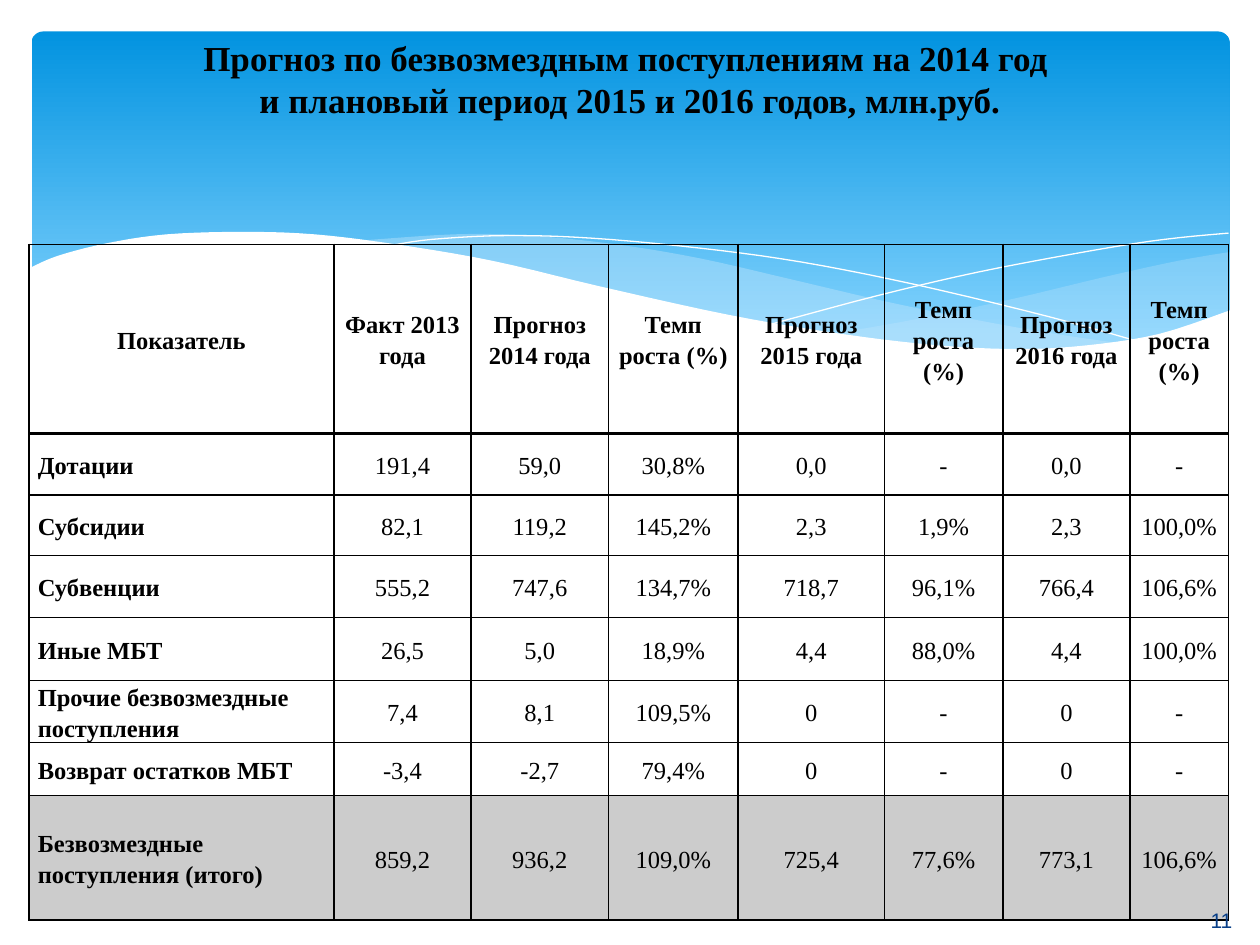
from dataclasses import dataclass

from lxml import etree
from pptx import Presentation
from pptx import util as u
from pptx.dml.color import RGBColor
from pptx.enum import shapes, text
from pptx.oxml import ns


@dataclass(frozen=True)
class Theme:
    sky_top: str = "0293E0"
    sky_bottom: str = "83D3FE"
    wave: str = "C6E7FC"
    white: str = "FFFFFF"
    ink: str = "000000"
    number: str = "073E87"
    serif: str = "Times New Roman"
    sans: str = "Arial"
    title_size: int = 20
    table_size: int = 14
    number_size: int = 12


THEME = Theme()

# Each wave is a list of edges; every edge is a smooth curve through its knots.
RIGHT_WAVE = [
    [(9.76, 2), (9.35, 2.07), (8.76, 2.2), (8.05, 2.37), (7.29, 2.53), (6.61, 2.65)],
    [(6.61, 2.65), (7.18, 2.73), (7.81, 2.77), (8.44, 2.77), (9.05, 2.69),
     (9.42, 2.59), (9.76, 2.47)],
]
MIDDLE_WAVE = [
    [(8.93, 2.73), (8.37, 2.65), (7.75, 2.54), (7.06, 2.4), (6.29, 2.22), (5.55, 2.05),
     (4.89, 1.94), (4.2, 1.87), (3.61, 1.86), (2.86, 1.91)],
    [(2.86, 1.91), (3.62, 2.03), (4.49, 2.22), (5.3, 2.4), (6.01, 2.55), (6.8, 2.68),
     (7.48, 2.76), (8.18, 2.79), (8.93, 2.73)],
]
FRONT_WAVE = [
    [(9.77, 2.46), (9.2, 2.65), (8.63, 2.74), (8.09, 2.77), (7.44, 2.74), (6.68, 2.65),
     (5.79, 2.5), (4.75, 2.27), (3.91, 2.07), (3.15, 1.94), (2.5, 1.86), (1.93, 1.84),
     (1.32, 1.86), (0.85, 1.93), (0.46, 2.03), (0.23, 2.13)],
    [(0.23, 3.29), (9.77, 3.29)],
]
FALLING_LINE = [[(3.09, 1.95), (3.43, 1.9), (4.01, 1.87), (4.69, 1.89), (5.56, 1.97),
                 (6.36, 2.08), (7.27, 2.26), (8.31, 2.51), (9.07, 2.72)]]
RISING_LINE = [[(6.13, 2.57), (6.95, 2.35), (7.76, 2.16), (8.66, 1.99), (9.24, 1.9),
                (9.75, 1.85)]]

COLUMN_WIDTHS = [2.42, 1.09, 1.09, 1.03, 1.16, 0.94, 1.01, 0.78]
ROW_HEIGHTS = [1.5, 0.49, 0.48, 0.49, 0.5, 0.49, 0.42, 0.99]
ROWS = [
    ["Показатель", "Факт 2013 года", "Прогноз 2014 года", "Темп роста (%)",
     "Прогноз 2015 года", "Темп роста (%)", "Прогноз 2016 года", "Темп роста (%)"],
    ["Дотации", "191,4", "59,0", "30,8%", "0,0", "-", "0,0", "-"],
    ["Субсидии", "82,1", "119,2", "145,2%", "2,3", "1,9%", "2,3", "100,0%"],
    ["Субвенции", "555,2", "747,6", "134,7%", "718,7", "96,1%", "766,4", "106,6%"],
    ["Иные МБТ", "26,5", "5,0", "18,9%", "4,4", "88,0%", "4,4", "100,0%"],
    ["Прочие безвозмездные поступления", "7,4", "8,1", "109,5%", "0", "-", "0", "-"],
    ["Возврат остатков МБТ", "-3,4", "-2,7", "79,4%", "0", "-", "0", "-"],
    ["Безвозмездные поступления (итого)", "859,2", "936,2", "109,0%", "725,4", "77,6%",
     "773,1", "106,6%"],
]


def place(sp, *box):
    sp.left, sp.top, sp.width, sp.height = (u.Inches(v) for v in box)


def add_run(p, words, size, font, color, bold=False):
    r = p.add_run()
    r.text = words
    r.font.size, r.font.name, r.font.bold = u.Pt(size), font, bold
    r.font.color.rgb = RGBColor.from_string(color)


def solid(fill, holder, color, opacity=100):
    """Fill with a colour; holder is the XML element that carries the fill."""
    fill.solid()
    fill.fore_color.rgb = RGBColor.from_string(color)
    if opacity < 100:
        tone = holder.find(".//" + ns.qn("a:srgbClr"))
        etree.SubElement(tone, ns.qn("a:alpha")).set("val", str(opacity * 1000))


def smooth(knots, steps=5):
    """Points of a Catmull-Rom curve through the knots."""
    padded = [knots[0], *knots, knots[-1]]
    points = [knots[0]]
    for quad in zip(padded, padded[1:], padded[2:], padded[3:]):
        for i in range(1, steps + 1):
            t = i / steps
            points.append(tuple(
                (2 * b + (c - a) * t + (2 * a - 5 * b + 4 * c - d) * t ** 2
                 + (3 * b - a - 3 * c + d) * t ** 3) / 2
                for a, b, c, d in zip(*quad)))
    return points


def add_curve(s, edges, close):
    points = [(u.Inches(x), u.Inches(y)) for edge in edges for x, y in smooth(edge)]
    builder = s.shapes.build_freeform(*points[0], scale=1.0)
    builder.add_line_segments(points[1:], close=close)
    sp = builder.convert_to_shape()
    sp.shadow.inherit = False
    return sp


def add_wave(s, edges, color, opacity=100):
    sp = add_curve(s, edges, close=True)
    solid(sp.fill, sp._element.spPr, color, opacity)
    sp.line.fill.background()


def add_hairline(s, edges):
    sp = add_curve(s, edges, close=False)
    sp.fill.background()
    sp.line.color.rgb = RGBColor.from_string(THEME.white)
    sp.line.width = u.Pt(0)


def add_sky(s):
    sp = s.shapes.add_shape(shapes.MSO_SHAPE.ROUNDED_RECTANGLE, 0, 0, 0, 0)
    place(sp, 0.25, 0.25, 9.51, 2.7)
    sp.adjustments[0] = 0.034
    sp.shadow.inherit = False
    sp.line.fill.background()
    sp.fill.gradient()
    sp.fill.gradient_angle = 270
    stops = [(0, THEME.sky_top), (0.9, THEME.sky_bottom)]
    for stop, (position, color) in zip(sp.fill.gradient_stops, stops):
        stop.position = position
        stop.color.rgb = RGBColor.from_string(color)


def add_title(s):
    title = s.shapes.title
    s.shapes._spTree.append(title._element)  # bring in front of the waves
    place(title, 0, 0, 10, 1.25)
    tf = title.text_frame
    tf.auto_size = text.MSO_AUTO_SIZE.NONE
    tf.vertical_anchor = text.MSO_ANCHOR.MIDDLE
    p = tf.paragraphs[0]
    p.alignment = text.PP_ALIGN.CENTER
    style = (THEME.title_size, THEME.serif, THEME.ink, True)
    add_run(p, "Прогноз по безвозмездным поступлениям на 2014 год ", *style)
    p.add_line_break()
    add_run(p, "и плановый период 2015 и 2016 годов, млн.руб.", *style)


def set_borders(cell, **widths):
    """Draw the cell borders; widths in points for L, R, T and B."""
    tc_pr = cell._tc.get_or_add_tcPr()
    for i, (side, width) in enumerate(widths.items()):
        ln = etree.Element(ns.qn("a:ln" + side), w=str(u.Pt(width)))
        paint = etree.SubElement(ln, ns.qn("a:solidFill"))
        etree.SubElement(paint, ns.qn("a:srgbClr"), val=THEME.ink)
        tc_pr.insert(i, ln)


def fill_cell(cell, words, row, column):
    header, total = row == 0, row == len(ROWS) - 1
    cell.margin_left = cell.margin_right = u.Inches(0.07)
    cell.margin_top = cell.margin_bottom = 0
    cell.vertical_anchor = text.MSO_ANCHOR.MIDDLE
    p = cell.text_frame.paragraphs[0]
    p.line_spacing = 1.15
    left = column == 0 and not header
    p.alignment = text.PP_ALIGN.LEFT if left else text.PP_ALIGN.CENTER
    add_run(p, words, THEME.table_size, THEME.serif, THEME.ink, header or column == 0)
    if total:
        solid(cell.fill, cell._tc.tcPr, THEME.ink, 20)
    else:
        cell.fill.background()
    set_borders(cell, L=1, R=1, T=2 if row == 1 else 1, B=2 if header else 1)


def add_forecast_table(s):
    frame = s.shapes.add_table(len(ROWS), len(COLUMN_WIDTHS), u.Inches(0.23), u.Inches(1.94),
                               u.Inches(sum(COLUMN_WIDTHS)), u.Inches(sum(ROW_HEIGHTS)))
    table = frame.table
    table.first_row = table.horz_banding = False
    for column, width in zip(table.columns, COLUMN_WIDTHS):
        column.width = u.Inches(width)
    for i, (height, values) in enumerate(zip(ROW_HEIGHTS, ROWS)):
        table.rows[i].height = u.Inches(height)
        for j, words in enumerate(values):
            fill_cell(table.cell(i, j), words, i, j)


def add_page_number(s):
    sp = s.shapes.add_textbox(0, 0, 0, 0)
    place(sp, 9.06, 7.1, 1.27, 0.4)
    tf = sp.text_frame
    tf.word_wrap = True
    tf.vertical_anchor = text.MSO_ANCHOR.MIDDLE
    p = tf.paragraphs[0]
    p.alignment = text.PP_ALIGN.CENTER
    add_run(p, "11", THEME.number_size, THEME.sans, THEME.number)


def main():
    prs = Presentation()
    prs.slide_width, prs.slide_height = u.Inches(10), u.Inches(7.5)
    s = prs.slides.add_slide(prs.slide_layouts[5])
    add_sky(s)
    add_wave(s, RIGHT_WAVE, THEME.wave, 29)
    add_wave(s, MIDDLE_WAVE, THEME.wave, 40)
    add_hairline(s, FALLING_LINE)
    add_hairline(s, RISING_LINE)
    add_wave(s, FRONT_WAVE, THEME.white)
    add_title(s)
    add_forecast_table(s)
    add_page_number(s)
    prs.save("out.pptx")


if __name__ == "__main__":
    main()
